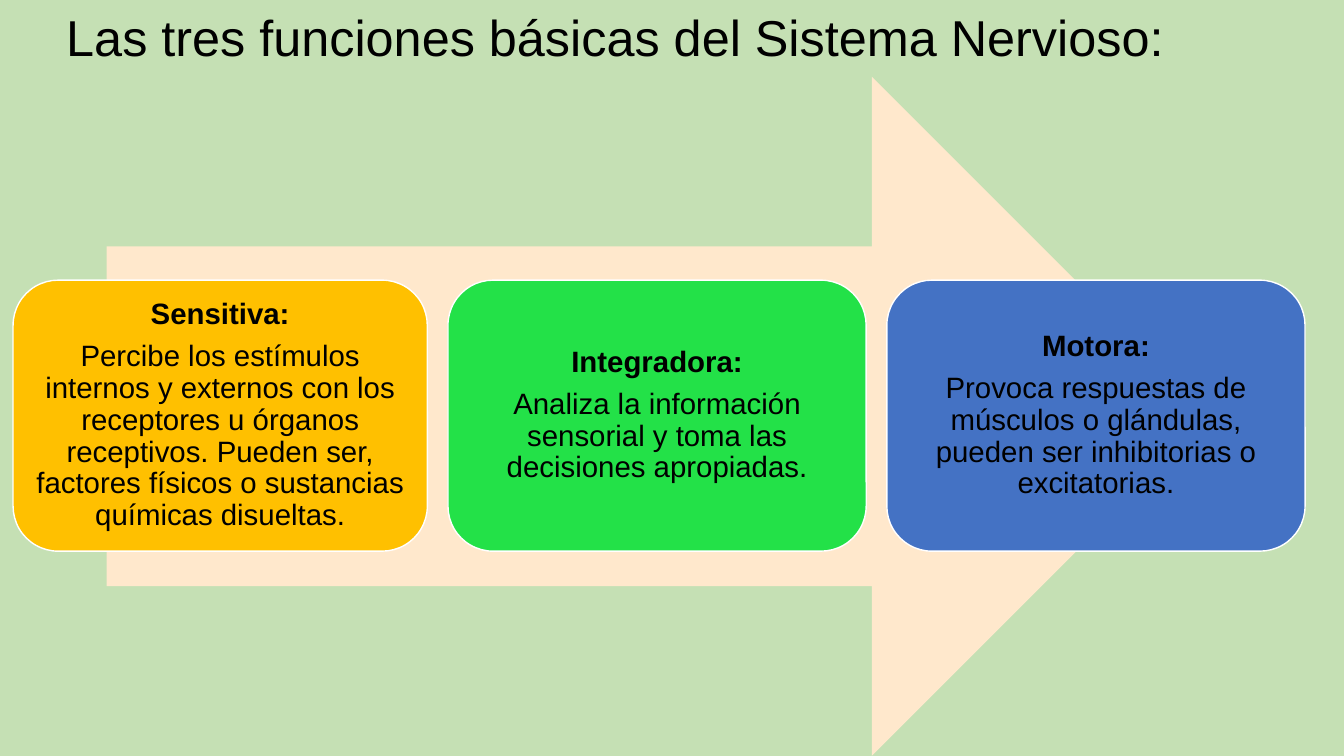
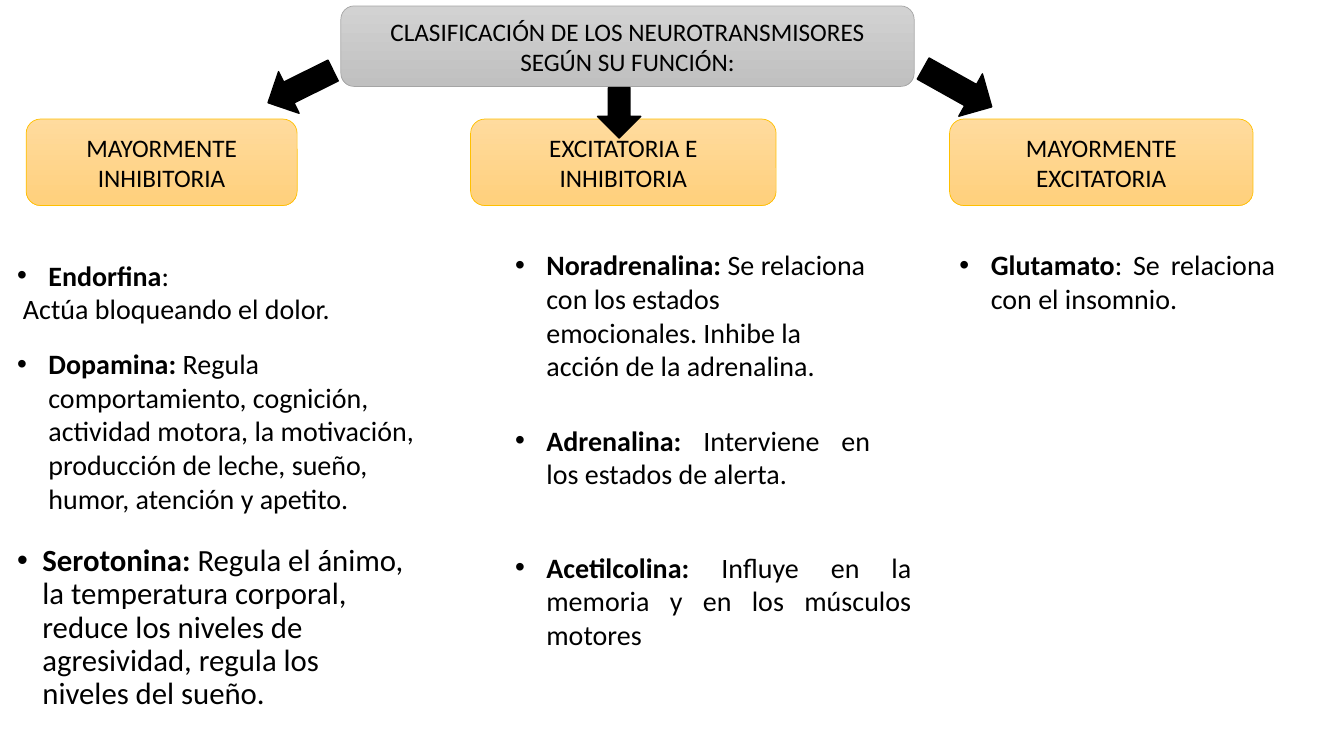
import pptx
import pptx.util
import pptx.dml.color
import pptx.enum.shapes
import pptx.enum.text
import lxml.etree

Cm = pptx.util.Cm
Pt = pptx.util.Pt
MSO_SHAPE = pptx.enum.shapes.MSO_SHAPE
ALIGN = pptx.enum.text.PP_ALIGN
ANCHOR = pptx.enum.text.MSO_ANCHOR

COLORS = {
    "text": "000000",
    "white": "FFFFFF",
    "background": "C5E0B4",
    "process": "FFE8CC",
    "sensory": "FFC000",
    "integrating": "23E148",
    "motor": "4472C4",
    "gray_line": "A5A5A5",
    "gray_top": "D2D2D2",
    "gray_bottom": "C0C0C0",
    "gold_line": "FFC000",
    "gold_top": "FFDB9E",
    "gold_bottom": "FFD07C",
}
RGB = {name: pptx.dml.color.RGBColor.from_string(value) for name, value in COLORS.items()}


def write_text(shape, paragraphs, font="Calibri", size=20, align=ALIGN.LEFT, anchor=ANCHOR.TOP,
               line_spacing=1.0, space_after=0, bullet_indent=None, plain_indent=0):
    frame = shape.text_frame
    frame.word_wrap = True
    frame.vertical_anchor = anchor
    for index, (bold_text, plain_text) in enumerate(paragraphs):
        paragraph = frame.paragraphs[0] if index == 0 else frame.add_paragraph()
        paragraph.alignment = align
        paragraph.line_spacing = line_spacing
        if index < len(paragraphs) - 1:
            paragraph.space_after = Pt(space_after)
        properties = paragraph._p.get_or_add_pPr()
        if bullet_indent and bold_text:
            properties.set("marL", str(Cm(bullet_indent)))
            properties.set("indent", str(-Cm(bullet_indent)))
            for tag, attribute, value in (("a:buFont", "typeface", "Arial"), ("a:buChar", "char", "•")):
                element = lxml.etree.SubElement(properties, pptx.oxml.ns.qn(tag))
                element.set(attribute, value)
        elif plain_indent:
            properties.set("marL", str(Cm(plain_indent)))
        for text, bold in ((bold_text, True), (plain_text, False)):
            if text:
                run = paragraph.add_run()
                run.text = text
                run.font.name = font
                run.font.size = Pt(size)
                run.font.bold = bold
                run.font.color.rgb = RGB["text"]


def add_shape(slide, preset, box, fill, line=None, line_width=1, bottom=None, rotation=0):
    shape = slide.shapes.add_shape(preset, *map(Cm, box))
    shape.shadow.inherit = False
    shape.rotation = rotation
    if bottom:
        shape.fill.gradient()
        shape.fill.gradient_angle = 270
        for stop, color in zip(shape.fill.gradient_stops, (fill, bottom)):
            stop.color.rgb = RGB[color]
    else:
        shape.fill.solid()
        shape.fill.fore_color.rgb = RGB[fill]
    if line:
        shape.line.color.rgb = RGB[line]
        shape.line.width = Pt(line_width)
    else:
        shape.line.fill.background()
    return shape


presentation = pptx.Presentation()
presentation.slide_width = Cm(33.87)
presentation.slide_height = Cm(19.05)
blank_layout = presentation.slide_layouts[6]

slide = presentation.slides.add_slide(blank_layout)
slide.background.fill.solid()
slide.background.fill.fore_color.rgb = RGB["background"]

title = slide.shapes.add_textbox(Cm(1.42), Cm(0.1), Cm(30.38), Cm(1.83))
write_text(title, [("", "Las tres funciones básicas del Sistema Nervioso:")],
           font="Arial", size=36, anchor=ANCHOR.MIDDLE, line_spacing=0.9)

add_shape(slide, MSO_SHAPE.RIGHT_ARROW, (2.69, 1.93, 27.84, 17.12), "process")

functions = [
    ("sensory", 10.44, "Sensitiva:",
     "Percibe los estímulos internos y externos con los receptores u órganos receptivos. "
     "Pueden ser, factores físicos o sustancias químicas disueltas."),
    ("integrating", 10.54, "Integradora:",
     "Analiza la información sensorial y toma las decisiones apropiadas."),
    ("motor", 10.54, "Motora:",
     "Provoca respuestas de músculos o glándulas, pueden ser inhibitorias o excitatorias."),
]
card_left = 0.33
card_gap = 0.52
for color, width, heading, description in functions:
    card = add_shape(slide, MSO_SHAPE.ROUNDED_RECTANGLE, (card_left, 7.06, width, 6.83), color, "white")
    frame = card.text_frame
    frame.margin_left = frame.margin_right = frame.margin_top = frame.margin_bottom = Cm(0.23)
    write_text(card, [(heading, ""), ("", description)], font="Arial", size=21, align=ALIGN.CENTER,
               anchor=ANCHOR.MIDDLE, line_spacing=0.9, space_after=7.35)
    card_left += width + card_gap

slide = presentation.slides.add_slide(blank_layout)

left_column, middle_column, right_column = 0.18, 12.73, 23.93
body = {"bullet_indent": 0.79, "plain_indent": 0.15}
justified = {**body, "align": ALIGN.JUSTIFY}
large = {"bullet_indent": 0.64, "size": 22, "line_spacing": 0.9}
neurotransmitters = [
    ((left_column, 6.38, 8.48, 1.96), body,
     [("Endorfina", ":"), ("", "Actúa bloqueando el dolor.")]),
    ((left_column, 8.61, 10.82, 4.52), body,
     [("Dopamina: ", "Regula comportamiento, cognición, actividad motora, la motivación, "
                     "producción de leche, sueño, humor, atención y apetito.")]),
    ((left_column, 13.61, 10.24, 4.9), large,
     [("Serotonina: ", "Regula el ánimo, la temperatura corporal, reduce los niveles de agresividad, "
                       "regula los niveles del sueño.")]),
    ((middle_column, 6.12, 9.45, 3.68), body,
     [("Noradrenalina: ", "Se relaciona con los estados emocionales. Inhibe la acción de la adrenalina.")]),
    ((middle_column, 10.54, 9.45, 1.96), justified,
     [("Adrenalina: ", "Interviene en los estados de alerta.")]),
    ((middle_column, 13.74, 10.49, 2.82), justified,
     [("Acetilcolina:", " Influye en la memoria y en los músculos motores")]),
    ((right_column, 6.12, 8.46, 1.96), justified,
     [("Glutamato", ": Se relaciona con el insomnio.")]),
]
for box, text_format, paragraphs in neurotransmitters:
    textbox = slide.shapes.add_textbox(*map(Cm, box))
    write_text(textbox, paragraphs, **text_format)

headers = [
    ((8.59, 0.15, 14.45, 2.03), "gray", ["CLASIFICACIÓN DE LOS NEUROTRANSMISORES", "SEGÚN SU FUNCIÓN:"]),
    ((0.66, 3, 6.83, 2.18), "gold", ["MAYORMENTE", "INHIBITORIA"]),
    ((11.86, 3, 7.7, 2.18), "gold", ["EXCITATORIA E INHIBITORIA"]),
    ((23.93, 3, 7.65, 2.18), "gold", ["MAYORMENTE EXCITATORIA"]),
]
for box, color, lines in headers:
    header = add_shape(slide, MSO_SHAPE.ROUNDED_RECTANGLE, box, f"{color}_top", f"{color}_line",
                       line_width=0.5, bottom=f"{color}_bottom")
    write_text(header, [("", line) for line in lines], size=18, align=ALIGN.CENTER, anchor=ANCHOR.MIDDLE)

arrows = [
    ((6.99, 1.27, 1.17, 1.83), 63.7),
    ((15.06, 2.21, 1.09, 1.27), 0),
    ((23.52, 1.22, 1.22, 1.98), 299.2),
]
for box, rotation in arrows:
    add_shape(slide, MSO_SHAPE.DOWN_ARROW, box, "text", "text", rotation=rotation)

presentation.save("out.pptx")
